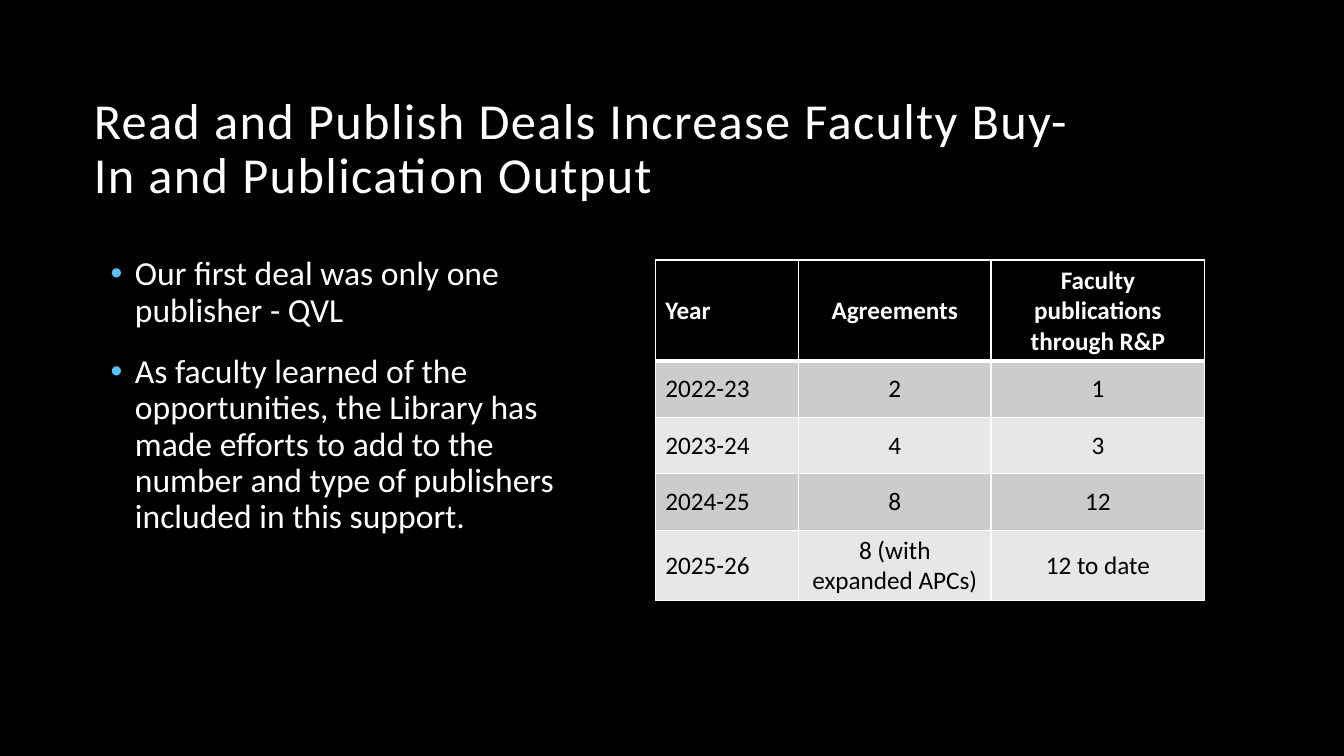
from lxml import etree
from pptx import Presentation
from pptx import util as u
from pptx.dml.color import RGBColor
from pptx.enum import text
from pptx.oxml import ns

BLACK = RGBColor(0, 0, 0)
WHITE = RGBColor(0xFF, 0xFF, 0xFF)
SKY = RGBColor(0x56, 0xC5, 0xFF)
BANDS = (RGBColor(0xCC, 0xCC, 0xCC), RGBColor(0xE7, 0xE7, 0xE7))

BULLETS = (
    "Our first deal was only one publisher - QVL",
    "As faculty learned of the opportunities, the Library has made efforts "
    "to add to the number and type of publishers included in this support.",
)
ROWS = (
    ("Year", "Agreements", "Faculty publications through R&P"),
    ("2022-23", "2", "1"),
    ("2023-24", "4", "3"),
    ("2024-25", "8", "12"),
    ("2025-26", "8 (with expanded APCs)", "12 to date"),
)


def add_xml(parent, tag, **attrs):
    return etree.SubElement(parent, ns.qn(tag), attrs)


def add_solid(parent, tag, color):
    add_xml(add_xml(parent, tag), "a:srgbClr", val=str(color))


class Deck:
    font = "Calibri"

    def __init__(self):
        self.prs = Presentation()
        self.prs.slide_width = u.Inches(13.33)
        self.prs.slide_height = u.Inches(7.5)
        self.slide = self.prs.slides.add_slide(self.prs.slide_layouts[5])
        fill = self.slide.background.fill
        fill.solid()
        fill.fore_color.rgb = BLACK

    def style(self, p, size, color, bold=False):
        p.font.name = self.font
        p.font.size = u.Pt(size)
        p.font.color.rgb = color
        p.font.bold = bold

    def title(self, words, left, top, width, height):
        sp = self.slide.shapes.title
        sp.left, sp.top = u.Inches(left), u.Inches(top)
        sp.width, sp.height = u.Inches(width), u.Inches(height)
        tf = sp.text_frame
        tf.text = words
        tf.word_wrap = True
        tf.auto_size = text.MSO_AUTO_SIZE.NONE
        tf.vertical_anchor = text.MSO_ANCHOR.BOTTOM
        p = tf.paragraphs[0]
        p.alignment = text.PP_ALIGN.LEFT
        p.line_spacing = 0.9
        self.style(p, 36, WHITE)
        p.runs[0]._r.get_or_add_rPr().set("spc", "100")

    def bullets(self, items, left, top, width, height):
        sp = self.slide.shapes.add_textbox(
            u.Inches(left), u.Inches(top), u.Inches(width), u.Inches(height))
        tf = sp.text_frame
        tf.word_wrap = True
        for i, item in enumerate(items):
            p = tf.add_paragraph() if i else tf.paragraphs[0]
            p.text = item
            pPr = p._p.get_or_add_pPr()
            pPr.set("marL", str(u.Inches(0.24)))
            pPr.set("indent", str(u.Inches(-0.24)))
            add_solid(pPr, "a:buClr", SKY)
            add_xml(pPr, "a:buFont", typeface="Arial")
            add_xml(pPr, "a:buChar", char="•")
            p.line_spacing = 0.9
            p.space_before = u.Pt(18 if i else 0)
            self.style(p, 24, WHITE)

    def borders(self, cell, row):
        tcPr = cell._tc.get_or_add_tcPr()
        thick = {(0, "B"), (1, "T")}
        for side in "LRTB":
            width = u.Pt(3 if (row, side) in thick else 1)
            ln = add_xml(tcPr, f"a:ln{side}", w=str(width))
            add_solid(ln, "a:solidFill", WHITE)

    def table(self, rows, widths, left, top, row_height):
        table = self.slide.shapes.add_table(
            len(rows), len(widths), u.Inches(left), u.Inches(top),
            u.Inches(sum(widths)), u.Inches(row_height * len(rows))).table
        for column, width in zip(table.columns, widths):
            column.width = u.Inches(width)
        for i, row in enumerate(rows):
            for j, words in enumerate(row):
                cell = table.cell(i, j)
                cell.text = words
                cell.vertical_anchor = text.MSO_ANCHOR.MIDDLE
                self.borders(cell, i)
                cell.fill.solid()
                cell.fill.fore_color.rgb = BANDS[(i - 1) % 2] if i else BLACK
                p = cell.text_frame.paragraphs[0]
                p.alignment = text.PP_ALIGN.CENTER if j else text.PP_ALIGN.LEFT
                self.style(p, 18, BLACK if i else WHITE, bold=i == 0)


def main():
    deck = Deck()
    deck.title("Read and Publish Deals Increase Faculty Buy-In and Publication Output",
               0.83, 0.58, 10, 1.5)
    deck.bullets(BULLETS, 1, 2.5, 4.83, 4.5)
    deck.table(ROWS, (1.42, 1.91, 2.12), 6.5, 2.58, 0.56)
    deck.prs.save("out.pptx")


if __name__ == "__main__":
    main()
